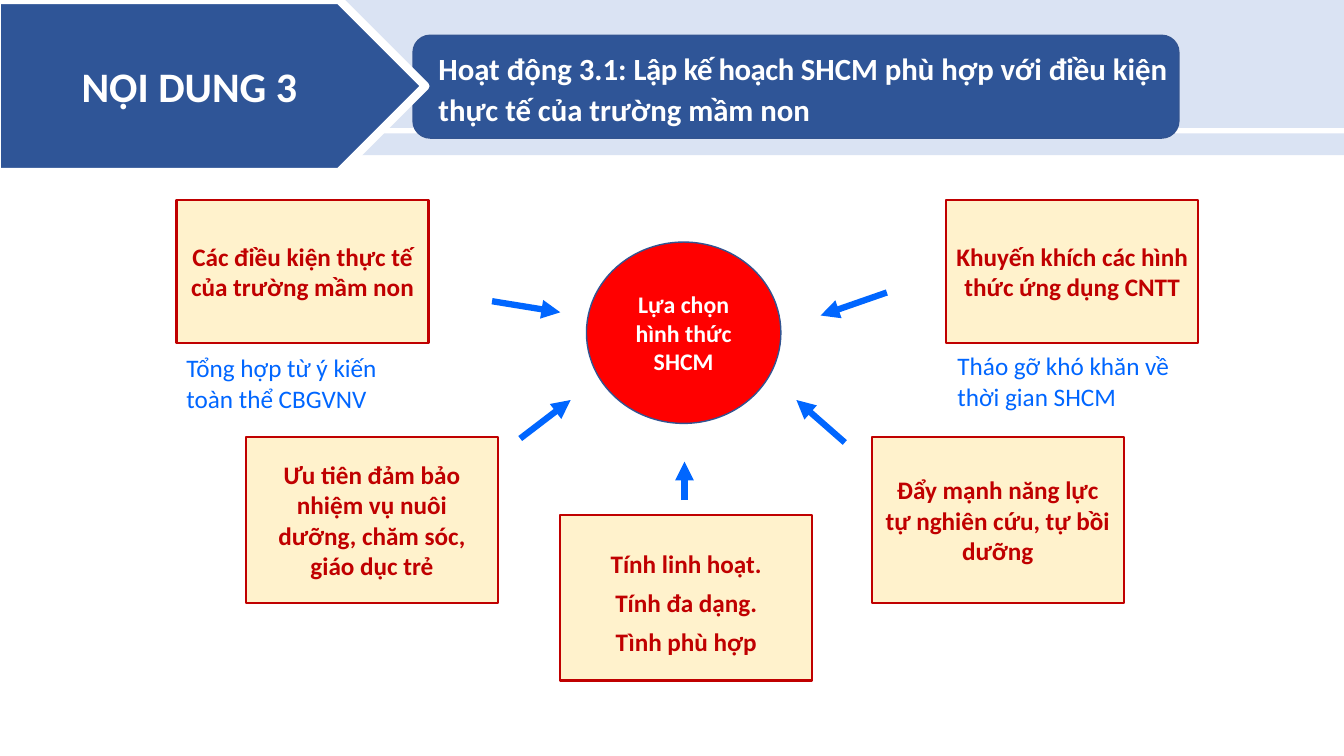
from dataclasses import dataclass

from lxml import etree
from pptx import Presentation
from pptx.dml.color import RGBColor
from pptx.enum.shapes import MSO_CONNECTOR, MSO_SHAPE
from pptx.enum.text import MSO_ANCHOR, MSO_AUTO_SIZE, PP_ALIGN
from pptx.oxml.ns import qn
from pptx.util import Cm, Pt

RECT, ROUNDED = MSO_SHAPE.RECTANGLE, MSO_SHAPE.ROUNDED_RECTANGLE
PENTAGON, OVAL = MSO_SHAPE.PENTAGON, MSO_SHAPE.OVAL
STRAIGHT = MSO_CONNECTOR.STRAIGHT
MIDDLE, CENTER, LEFT = MSO_ANCHOR.MIDDLE, PP_ALIGN.CENTER, PP_ALIGN.LEFT
FIT_TEXT = MSO_AUTO_SIZE.SHAPE_TO_FIT_TEXT

WHITE, PALE_BLUE, NAVY, NAVY_EDGE = "FFFFFF", "DAE3F3", "2F5597", "325491"
RED, DARK_RED, CREAM, BRIGHT_BLUE = "FF0000", "C00000", "FFF2CC", "0066FF"
SLIDE_W, SLIDE_H = 33.87, 19.05
FACTOR_W, UPPER_H, LOWER_H = 6.35, 3.61, 4.17
UPPER_TOP, LOWER_TOP = 5.03, 11.02


@dataclass
class TextStyle:
    size: float
    color: str
    bold: bool = True
    align: PP_ALIGN = CENTER
    spacing: float = 1.0


@dataclass
class Panel:
    preset: MSO_SHAPE
    box: tuple[float, float, float, float]
    fill: str
    edge: str | None = None
    edge_pt: float = 1


@dataclass
class Factor:
    left: float
    top: float
    height: float
    lines: list[str]
    spacing: float = 1.0


@dataclass
class Remark:
    left: float
    top: float
    text: str


@dataclass
class Arrow:
    start: tuple[float, float]
    end: tuple[float, float]


BACKDROP = [
    Panel(RECT, (0, 0, SLIDE_W, 3.91), PALE_BLUE),
    Panel(RECT, (5.64, 3.23, SLIDE_W - 5.64, 0.13), WHITE),
    Panel(ROUNDED, (10.41, 0.89, 19.3, 2.59), NAVY, NAVY_EDGE),
]
SECTION = Panel(PENTAGON, (-0.08, 0, 10.8, 4.34), NAVY, WHITE, 6)
CHOICE = Panel(OVAL, (14.78, 6.1, 4.9, 4.57), RED, NAVY_EDGE)
# Each title part with its letter spacing in hundredths of a point
TITLE_PARTS = [
    ("Hoạt động 3.1: ", 0),
    ("Lập kế hoạch ", -30),
    ("SHCM phù hợp với điều kiện thực tế của trường mầm non", 0),
]
FACTORS = [
    Factor(4.45, UPPER_TOP, UPPER_H, ["Các điều kiện thực tế của trường mầm non"]),
    Factor(23.85, UPPER_TOP, UPPER_H, ["Khuyến khích các hình thức ứng dụng CNTT"]),
    Factor(6.2, LOWER_TOP, LOWER_H,
           ["Ưu tiên đảm bảo nhiệm vụ nuôi dưỡng, chăm sóc, giáo dục trẻ"]),
    Factor(21.97, LOWER_TOP, LOWER_H,
           ["Đẩy mạnh năng lực tự nghiên cứu, tự bồi dưỡng"]),
    Factor(14.12, 12.98, LOWER_H,
           ["Tính linh hoạt.", "Tính đa dạng.", "Tình phù hợp"], 1.3),
]
REMARKS = [
    Remark(4.45, 8.76, "Tổng hợp từ ý kiến toàn thể CBGVNV"),
    Remark(23.88, 8.71, "Tháo gỡ khó khăn về thời gian SHCM"),
]
ARROWS = [
    Arrow((12.4, 7.59), (14.12, 7.87)),
    Arrow((13.11, 11.05), (14.38, 10.08)),
    Arrow((17.25, 12.6), (17.25, 11.63)),
    Arrow((21.29, 11.15), (20.07, 10.08)),
    Arrow((22.35, 7.37), (20.68, 7.95)),
]


def rgb(color: str) -> RGBColor:
    return RGBColor.from_string(color)


def write(frame, paragraphs: list[list[tuple[str, int]]], style: TextStyle) -> None:
    """Fill a text frame with paragraphs of (text, letter spacing) parts."""
    frame.word_wrap = True
    font_format = {"name": "Calibri", "size": Pt(style.size), "bold": style.bold}
    for index, parts in enumerate(paragraphs):
        paragraph = frame.add_paragraph() if index else frame.paragraphs[0]
        paragraph.alignment = style.align
        paragraph.line_spacing = style.spacing
        for text, tracking in parts:
            run = paragraph.add_run()
            run.text = text
            for attribute, value in font_format.items():
                setattr(run.font, attribute, value)
            run.font.color.rgb = rgb(style.color)
            if tracking:
                run.font._element.set("spc", str(tracking))


def draw_panel(slide, panel: Panel, lines: list[str] | None = None,
               style: TextStyle | None = None) -> None:
    shape = slide.shapes.add_shape(panel.preset, *map(Cm, panel.box))
    shape.shadow.inherit = False
    shape.fill.solid()
    shape.fill.fore_color.rgb = rgb(panel.fill)
    if panel.edge:
        shape.line.color.rgb = rgb(panel.edge)
        shape.line.width = Pt(panel.edge_pt)
    else:
        shape.line.fill.background()
    if lines and style:
        shape.text_frame.vertical_anchor = MIDDLE
        write(shape.text_frame, [[(line, 0)] for line in lines], style)


def draw_arrow(slide, arrow: Arrow) -> None:
    connector = slide.shapes.add_connector(
        STRAIGHT, *map(Cm, arrow.start + arrow.end))
    connector.line.color.rgb = rgb(BRIGHT_BLUE)
    connector.line.width = Pt(4.5)
    outline = connector.line._get_or_add_ln()
    etree.SubElement(outline, qn("a:tailEnd"), type="triangle")
    etree.SubElement(connector._element.spPr, qn("a:effectLst"))


def main() -> None:
    deck = Presentation()
    deck.slide_width, deck.slide_height = Cm(SLIDE_W), Cm(SLIDE_H)
    slide = deck.slides.add_slide(deck.slide_layouts[6])

    # Header band, section marker and title
    for panel in BACKDROP:
        draw_panel(slide, panel)
    draw_panel(slide, SECTION, ["NỘI DUNG 3"], TextStyle(30, WHITE))
    title = slide.shapes.add_textbox(Cm(10.8), Cm(1.04), Cm(18.92), Cm(2.29))
    write(title.text_frame, [TITLE_PARTS],
          TextStyle(22, WHITE, align=LEFT, spacing=1.1))

    # Central choice and the factors around it
    draw_panel(slide, CHOICE, ["Lựa chọn hình thức SHCM"], TextStyle(17, WHITE))
    for factor in FACTORS:
        box = (factor.left, factor.top, FACTOR_W, factor.height)
        draw_panel(slide, Panel(RECT, box, CREAM, DARK_RED, 1.5), factor.lines,
                   TextStyle(18, DARK_RED, spacing=factor.spacing))

    # Remarks under the upper factors
    for remark in REMARKS:
        note = slide.shapes.add_textbox(
            Cm(remark.left), Cm(remark.top), Cm(6.27), Cm(1.8))
        write(note.text_frame, [[(remark.text, 0)]],
              TextStyle(18, BRIGHT_BLUE, bold=False, align=LEFT))
        note.text_frame.auto_size = FIT_TEXT

    # Arrows towards the centre
    for arrow in ARROWS:
        draw_arrow(slide, arrow)

    deck.save("out.pptx")


if __name__ == "__main__":
    main()
